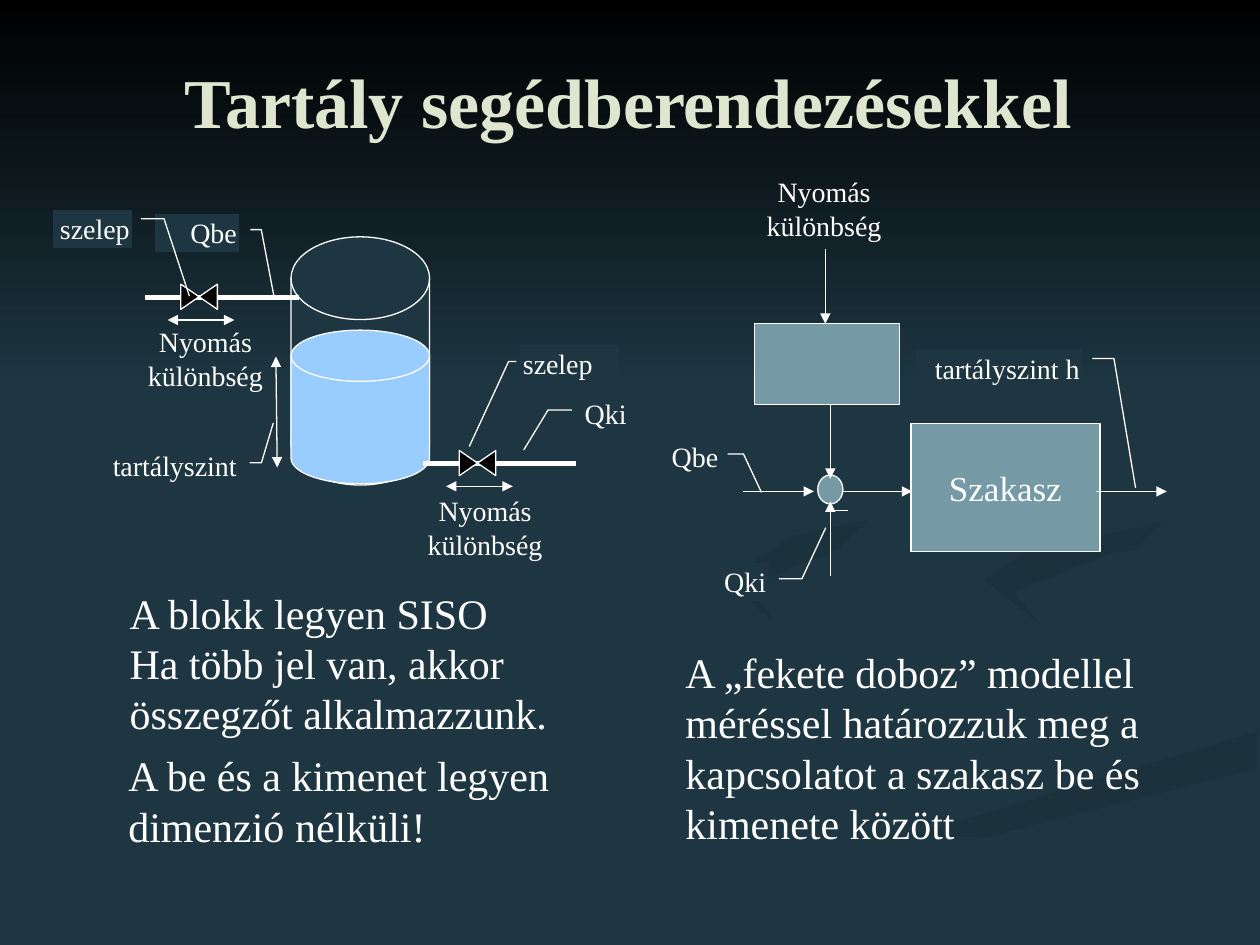
from dataclasses import dataclass

from lxml import etree
from pptx import Presentation
from pptx import util as u
from pptx.dml.color import RGBColor
from pptx.enum import shapes, text
from pptx.oxml.ns import qn

SHAPE = shapes.MSO_SHAPE
ALIGN = text.PP_ALIGN


@dataclass(frozen=True)
class Theme:
    font: str = "Times New Roman"
    background: str = "1D3641"
    swoosh: str = "1C343E"
    swoosh_dark: str = "1B323C"
    black: str = "000000"
    white: str = "FFFFFF"
    title: str = "DFE6D0"
    water: str = "99CCFF"
    block: str = "759AA5"
    title_size: int = 40
    body_size: int = 24
    block_size: int = 20
    label_size: int = 16
    thin: float = 0.75
    pipe: float = 3


THEME = Theme()

# Background bands: start colour, end colour, clockwise angle, outline in inches
BANDS = [
    (THEME.background, THEME.swoosh, 0, [
        (7.8, 5.5), (6.1, 5), (5.75, 4.6), (5.8, 4.85), (7.7, 5.5), (7.8, 5.8),
        (5.4, 6.5), (3, 7.49), (3.6, 7.49), (5.3, 6.75), (7.6, 6.1), (8, 5.8)]),
    (THEME.background, THEME.swoosh, 45, [
        (9.43, 5.7), (9.05, 5.4), (7.6, 5), (7.24, 4.64), (7.55, 5.05),
        (8.9, 5.5), (9.18, 5.8), (8.94, 6.05), (9.3, 5.9)]),
    (THEME.swoosh_dark, THEME.background, 90, [
        (5.03, 7.49), (5.7, 7.49), (7.2, 6.8), (9.98, 6.1), (9.98, 5.8), (7, 6.7)]),
    (THEME.background, THEME.background, 0, [
        (7.25, 4.64), (7.6, 5), (9.05, 5.4), (9.43, 5.7), (9, 6.05), (6.6, 6.7),
        (4.77, 7.49), (5.2, 7.47), (7, 6.7), (9.99, 5.8), (9.99, 5.4), (8.2, 4.9),
        (7.81, 4.6), (8.2, 4.35), (9.99, 4), (9.99, 3.87), (7.7, 4.3)]),
    (THEME.swoosh_dark, THEME.background, 45, [
        (7.81, 4.6), (8.26, 4.96), (8.05, 4.7), (8.8, 4.4), (9.98, 4.2),
        (9.98, 4), (8.2, 4.35)]),
    (THEME.swoosh_dark, THEME.background, 45, [
        (6.8, 4.3), (8.5, 3.9), (8.94, 3.4), (8.6, 2.9), (7.6, 2.33), (8.7, 3),
        (8.85, 3.5), (8.2, 3.85), (6.3, 4.25), (5.77, 4.6), (6.2, 5), (5.95, 4.65)]),
    (THEME.black, THEME.background, 90, [(0, 0), (0, 3.08), (10, 3.08), (10, 0)]),
]

# Callouts: words, left, top, width, leader start, bend and end as fractions of the box
CALLOUTS = [
    ("Qbe", 1.23, 1.7, 0.67, (1.13, 0.41), 1.26, (1.41, 2.17)),
    ("Qki", 4.62, 3.14, 0.51, (-0.16, 0.38), -0.53, (-0.91, 1.44)),
    ("tartályszint", 0.73, 3.55, 1.17, (1.07, 0.41), 1.15, (1.23, -0.64)),
    ("szelep", 4.13, 2.74, 0.78, (-0.04, 0.43), -0.12, (-0.52, 2.68)),
    ("szelep", 0.42, 1.67, 0.63, (1.11, 0.22), 1.4, (1.72, 2.27)),
    ("tartályszint h", 7.27, 2.78, 1.32, (1.06, 0.22), 1.19, (1.32, 3.64)),
    ("Qbe", 5.3, 3.48, 0.42, (1.13, 0.41), 1.43, (1.77, 1.43)),
    ("Qki", 5.59, 4.47, 0.51, (1.16, 0.41), 1.52, (1.89, -0.94)),
]


def color(value):
    return RGBColor.from_string(value)


def add_band(slide, start, end, angle, points):
    corners = [(u.Inches(x), u.Inches(y)) for x, y in points]
    builder = slide.shapes.build_freeform(*corners[0])
    builder.add_line_segments(corners[1:], close=True)
    shape = builder.convert_to_shape()
    shape.shadow.inherit = False
    shape.line.fill.background()
    shape.fill.gradient()
    shape.fill.gradient_angle = (360 - angle) % 360  # counted anticlockwise
    for stop, value in zip(shape.fill.gradient_stops, (start, end)):
        stop.color.rgb = color(value)


def write(shape, lines, size, align=ALIGN.LEFT, ink=THEME.white, bold=False,
          anchor=text.MSO_ANCHOR.TOP, inset=None, wrap=True):
    frame = shape.text_frame
    frame.word_wrap = wrap
    frame.vertical_anchor = anchor
    if inset:
        frame.margin_left = frame.margin_right = u.Inches(inset[0])
        frame.margin_top = frame.margin_bottom = u.Inches(inset[1])
    for number, words in enumerate(lines):
        para = frame.add_paragraph() if number else frame.paragraphs[0]
        para.alignment = align
        span = para.add_run()
        span.text = words
        span.font.name, span.font.size, span.font.bold = THEME.font, u.Pt(size), bold
        span.font.color.rgb = color(ink)


def add_text(slide, lines, at, size, **style):
    box = slide.shapes.add_textbox(*map(u.Inches, at))
    write(box, lines, size, **style)


def add_figure(slide, kind, at, fill):
    shape = slide.shapes.add_shape(kind, *map(u.Inches, at))
    shape.shadow.inherit = False
    shape.fill.solid()
    shape.fill.fore_color.rgb = color(fill)
    shape.line.color.rgb = color(THEME.white)
    shape.line.width = u.Pt(THEME.thin)
    return shape


def add_callout(slide, words, left, top, width, start, bend, end):
    """Label with a leader that runs level to the bend; text sits on the leader's side."""
    shape = add_figure(slide, SHAPE.LINE_CALLOUT_2_NO_BORDER, (left, top, width, 0.3),
                       THEME.background)
    leader = (start[1], start[0], start[1], bend, end[1], end[0])
    for index, value in enumerate(leader):
        shape.adjustments[index] = value
    align = ALIGN.RIGHT if bend > 0 else ALIGN.LEFT
    write(shape, [words], THEME.label_size, align, inset=(0.02, 0.01))


def add_line(slide, start, end, width=THEME.thin, arrows=()):
    """Arrows names the ends with a triangle: headEnd at start, tailEnd at end."""
    line = slide.shapes.add_connector(
        shapes.MSO_CONNECTOR.STRAIGHT, *map(u.Inches, (*start, *end)))
    line.line.color.rgb = color(THEME.white)
    line.line.width = u.Pt(width)
    for name in arrows:
        etree.SubElement(line.line._get_or_add_ln(), qn(f"a:{name}"), type="triangle")
    etree.SubElement(line._element.spPr, qn("a:effectLst"))


def add_valve(slide, start, length, offset):
    """Pipe with a valve on it, and the arrow for its pressure difference below."""
    left, level = start
    add_line(slide, start, (left + length, level), THEME.pipe)
    valve = add_figure(slide, SHAPE.FLOWCHART_COLLATE,
                       (left + offset, level - 0.15, 0.2, 0.29), THEME.black)
    valve.rotation = 270
    arrow = left + offset - 0.15
    add_line(slide, (arrow, level + 0.18), (arrow + 0.53, level + 0.18),
             arrows=("headEnd", "tailEnd"))


def add_tank(slide):
    for top, height, fill in [(1.88, 1.97, THEME.background), (2.62, 1.22, THEME.water)]:
        add_figure(slide, SHAPE.FLOWCHART_MAGNETIC_DISK, (2.31, top, 1.1, height), fill)
    add_valve(slide, (1.15, 2.36), 1.22, 0.33)
    add_valve(slide, (3.36, 3.68), 1.21, 0.33)
    add_line(slide, (2.19, 2.83), (2.2, 3.71), arrows=("headEnd", "tailEnd"))


def add_block_diagram(slide):
    process = add_figure(slide, SHAPE.RECTANGLE, (7.23, 3.36, 1.5, 1.02), THEME.block)
    write(process, ["Szakasz"], THEME.block_size, ALIGN.CENTER,
          anchor=text.MSO_ANCHOR.MIDDLE, wrap=False)
    add_figure(slide, SHAPE.RECTANGLE, (5.99, 2.57, 1.15, 0.64), THEME.block)
    add_figure(slide, SHAPE.OVAL, (6.49, 3.77, 0.2, 0.23), THEME.block)
    for left in (5.9, 6.68, 8.7):
        add_line(slide, (left, 3.9), (left + 0.56, 3.9), arrows=("tailEnd",))
    for x, start, run in [(6.59, 4.57, -0.59), (6.59, 3.21, 0.59), (6.55, 1.98, 0.59)]:
        add_line(slide, (x, start), (x, start + run), arrows=("tailEnd",))
    add_line(slide, (6.63, 4.05), (6.73, 4.05))  # minus sign of the summing point


def main():
    deck = Presentation()
    deck.slide_width, deck.slide_height = u.Inches(10), u.Inches(7.5)
    slide = deck.slides.add_slide(deck.slide_layouts[6])
    slide.background.fill.solid()
    slide.background.fill.fore_color.rgb = color(THEME.background)
    for band in BANDS:
        add_band(slide, *band)
    add_text(slide, ["Tartály segédberendezésekkel"], (0.74, 0.45, 8.5, 0.7), THEME.title_size,
             align=ALIGN.CENTER, ink=THEME.title, bold=True, anchor=text.MSO_ANCHOR.MIDDLE)
    add_tank(slide)
    add_block_diagram(slide)
    for callout in CALLOUTS:
        add_callout(slide, *callout)
    for left, top in [(1.04, 2.53), (3.26, 3.87), (5.95, 1.34)]:
        add_text(slide, ["Nyomás különbség"], (left, top, 1.18, 0.64), THEME.label_size,
                 align=ALIGN.CENTER)
    add_text(slide, ["A blokk legyen SISO", "Ha több jel van, akkor összegzőt alkalmazzunk."],
             (0.93, 4.61, 3.91, 1.31), THEME.body_size)
    add_text(slide, ["A be és a kimenet legyen dimenzió nélküli!"],
             (0.92, 5.9, 3.65, 0.91), THEME.body_size)
    add_text(slide, ["A „fekete doboz” modellel méréssel határozzuk meg a kapcsolatot "
                     "a szakasz be és kimenete között"],
             (5.42, 5.12, 3.84, 1.64), THEME.body_size, inset=(0.02, 0.01))
    deck.save("out.pptx")


if __name__ == "__main__":
    main()
